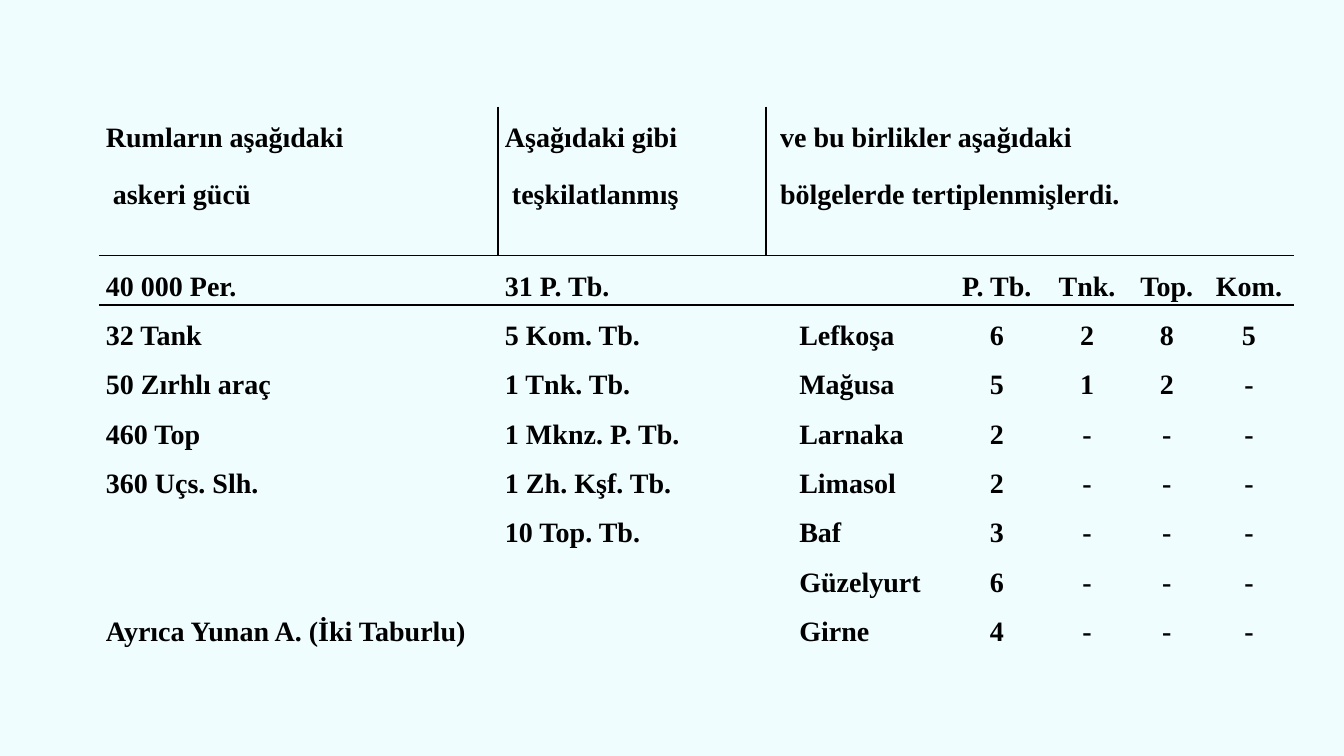
from lxml.etree import SubElement
from pptx import Presentation
from pptx.dml.color import RGBColor
from pptx.enum.text import MSO_ANCHOR, PP_ALIGN
from pptx.oxml import parse_xml
from pptx.oxml.ns import qn
from pptx.util import Inches, Pt

PLAIN = "{2D5ABB26-0587-4C30-8999-92F81FD0307C}"  # table style without grid
INK = "000000"

HEADS = ["Rumların aşağıdaki\n askeri gücü ",
         "Aşağıdaki gibi\n teşkilatlanmış",
         " ve bu birlikler aşağıdaki \n bölgelerde tertiplenmişlerdi."]

# Strength, units, place, then the four counts
BODY = [
    ("40 000 Per.", "31 P. Tb.", "", "P. Tb.", "Tnk.", "Top.", "Kom."),
    ("32 Tank", "5 Kom. Tb.", "Lefkoşa", "6", "2", "8", "5"),
    ("50 Zırhlı araç", "1 Tnk. Tb.", "Mağusa", "5", "1", "2", "-"),
    ("460 Top", "1 Mknz. P. Tb.", "Larnaka", "2", "-", "-", "-"),
    ("360 Uçs. Slh.", "1 Zh. Kşf. Tb.", "Limasol", "2", "-", "-", "-"),
    ("", "10 Top. Tb.", "Baf", "3", "-", "-", "-"),
    ("", "", "Güzelyurt", "6", "-", "-", "-"),
    ("Ayrıca Yunan A. (İki Taburlu)", "", "Girne", "4", "-", "-", "-"),
]

# Shares of the slide's size, in percent
LEFT, TOP = 7.35, 14.1
WIDTHS = [29.7, 19.95, 1.95, 11.7, 7.05, 6.38, 5.48, 6.75]
HEIGHTS = [19.73] + [6.52] * len(BODY)


def color(code):
    return RGBColor.from_string(code)


def write(frame, text, font="Times New Roman", size=20, bold=True,
          ink=INK, align=PP_ALIGN.JUSTIFY, line=1.5, after=8):
    for i, part in enumerate(text.split("\n")):
        para = frame.add_paragraph() if i else frame.paragraphs[0]
        para.alignment = align
        para.line_spacing = line
        para.space_after = Pt(after)
        run = para.add_run()
        run.text = part
        run.font.name = font
        run.font.size = Pt(size)
        run.font.bold = bold
        run.font.color.rgb = color(ink)


class Deck:
    def __init__(self, back):
        self.prs = Presentation()
        self.prs.slide_width, self.prs.slide_height = Inches(13.33), Inches(7.5)
        self.slide = self.prs.slides.add_slide(self.prs.slide_layouts[6])
        fill = self.slide.background.fill
        fill.solid()
        fill.fore_color.rgb = color(back)

    def wide(self, share):
        return round(self.prs.slide_width * share / 100)

    def high(self, share):
        return round(self.prs.slide_height * share / 100)

    def table(self, left, top, widths, heights):
        shape = self.slide.shapes.add_table(
            len(heights), len(widths), self.wide(left), self.high(top),
            self.wide(sum(widths)), self.high(sum(heights)))
        table = shape.table
        table.first_row = table.horz_banding = False
        table._tbl.tblPr.find(qn("a:tableStyleId")).text = PLAIN
        for col, share in zip(table.columns, widths):
            col.width = self.wide(share)
        for row, share in zip(table.rows, heights):
            row.height = self.high(share)
        for cell in table.iter_cells():
            cell.fill.background()
            cell.margin_left = cell.margin_right = Inches(0.07)
            cell.margin_top = cell.margin_bottom = 0
            cell.vertical_anchor = MSO_ANCHOR.TOP
        return table

    def rule(self, cell, sides, width=1):
        props = cell._tc.get_or_add_tcPr()
        for i, side in enumerate(s for s in "LRTB" if s in sides):
            edge = parse_xml(
                '<a:ln%s xmlns:a="http://schemas.openxmlformats.org/'
                'drawingml/2006/main" w="%d"/>' % (side, Pt(width)))
            fill = SubElement(edge, qn("a:solidFill"))
            SubElement(fill, qn("a:srgbClr"), val=INK)
            props.insert(i, edge)

    def save(self):
        self.prs.save("out.pptx")


def main():
    deck = Deck("F0FDFE")
    table = deck.table(LEFT, TOP, WIDTHS, HEIGHTS)

    # Header row
    table.cell(0, 2).merge(table.cell(0, 7))
    for col, head in enumerate(HEADS):
        write(table.cell(0, col).text_frame, head)

    # Body rows: the units span two columns
    for r, row in enumerate(BODY, 1):
        table.cell(r, 1).merge(table.cell(r, 2))
        for col, text in zip((0, 1, 3, 4, 5, 6, 7), row):
            if text:
                align = PP_ALIGN.CENTER if col > 3 else PP_ALIGN.JUSTIFY
                write(table.cell(r, col).text_frame, text, align=align)

    # Rules around the header
    for col in range(len(WIDTHS)):
        sides = {0: "RB", 1: "LRB", 2: "LB"}.get(col, "B")
        deck.rule(table.cell(0, col), sides)
        deck.rule(table.cell(1, col), "T")

    deck.save()


if __name__ == "__main__":
    main()
